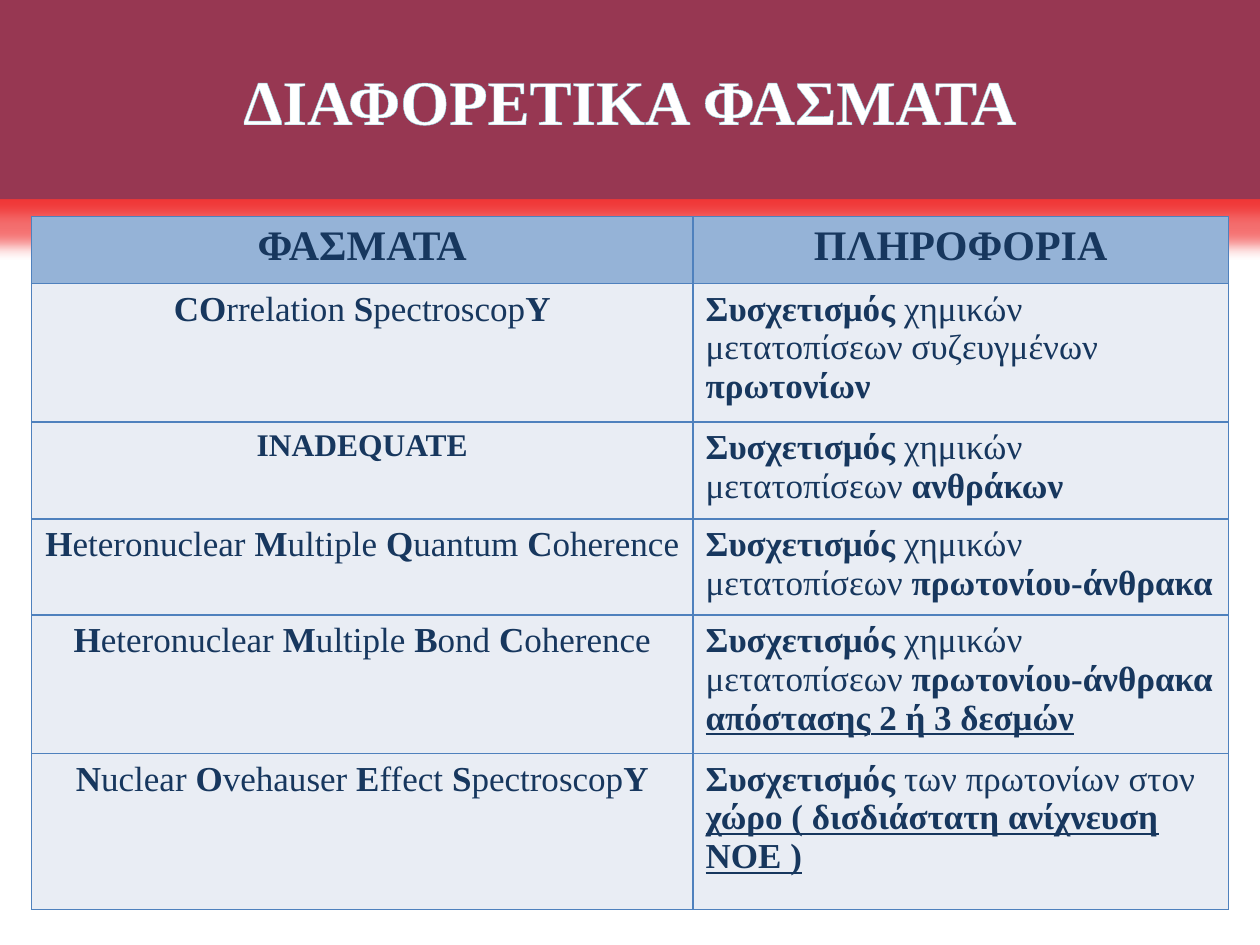
from lxml import etree
from pptx import Presentation
from pptx.dml.color import RGBColor
from pptx.enum import shapes, text
from pptx.oxml import ns
from pptx.util import Inches, Pt

NAVY, BANNER, HEADER, BODY, BORDER = "17375E", "973752", "95B3D7", "E9EDF4", "4F81BD"
CENTER, LEFT = text.PP_ALIGN.CENTER, text.PP_ALIGN.LEFT
COLUMN_WIDTHS = [5.25, 4.25]
ROW_HEIGHTS = [0.53, 1.1, 0.77, 0.76, 1.1, 1.24]

# *...* switches bold, _..._ switches underline
SPECTRA = [
    ("*CO*rrelation *S*pectroscop*Y*",
     "*Συσχετισμός *χημικών μετατοπίσεων συζευγμένων *πρωτονίων*"),
    ("*INADEQUATE*",
     "*Συσχετισμός *χημικών μετατοπίσεων *ανθράκων*"),
    ("*H*eteronuclear *M*ultiple* Q*uantum *C*oherence",
     "*Συσχετισμός *χημικών μετατοπίσεων *πρωτονίου-άνθρακα*"),
    ("*H*eteronuclear *M*ultiple* B*ond* C*oherence",
     "*Συσχετισμός *χημικών μετατοπίσεων *πρωτονίου-άνθρακα _απόστασης* *2 ή 3 δεσμών_*"),
    ("*N*uclear *O*vehauser *E*ffect *S*pectroscop*Y*",
     "*Συσχετισμός *των πρωτονίων στον *_χώρο ( δισδιάστατη ανίχνευση NOE )_*"),
]


def color(value):
    return RGBColor.from_string(value)


def add_xml(parent, tag, **attributes):
    return etree.SubElement(parent, ns.qn(tag), attributes)


def add_solid_fill(parent, value):
    return add_xml(add_xml(parent, "a:solidFill"), "a:srgbClr", val=value)


def add_run(paragraph, words, size, value, **styles):
    run = paragraph.add_run()
    run.text = words
    formats = {"name": "Times New Roman", "size": Pt(size), **styles}
    for name, setting in formats.items():
        setattr(run.font, name, setting)
    run.font.color.rgb = color(value)
    return run


def add_marked_runs(paragraph, marked, size):
    underlined = False
    for i, stretch in enumerate(marked.split("*")):
        for j, words in enumerate(stretch.split("_")):
            if j:
                underlined = not underlined
            if words:
                add_run(paragraph, words, size, NAVY, bold=i % 2 == 1, underline=underlined)


def add_banner(slide, title):
    banner = slide.shapes.add_shape(
        shapes.MSO_SHAPE.RECTANGLE, 0, 0, Inches(10), Inches(1.58))
    banner.shadow.inherit = False
    banner.fill.solid()
    banner.fill.fore_color.rgb = color(BANNER)
    banner.line.fill.background()
    effects = banner._element.spPr.find(ns.qn("a:effectLst"))
    glow = add_xml(effects, "a:glow", rad=str(Inches(0.24)))
    add_xml(add_xml(glow, "a:srgbClr", val="EE1111"), "a:alpha", val="60000")

    banner.text_frame.vertical_anchor = text.MSO_ANCHOR.MIDDLE
    paragraph = banner.text_frame.paragraphs[0]
    paragraph.alignment = CENTER
    run = add_run(paragraph, title, 36, "FFFFFF", bold=True)
    properties = run.font._element
    outline = add_xml(properties, "a:ln", w=str(Pt(1.45)))
    add_solid_fill(outline, "93CDDD")
    properties.insert(0, outline)


def fill_cell(cell, marked, size, alignment, background):
    paragraph = cell.text_frame.paragraphs[0]
    paragraph.alignment = alignment
    add_marked_runs(paragraph, marked, size)
    properties = cell._tc.get_or_add_tcPr()
    for side in ("L", "R", "T", "B"):
        add_solid_fill(add_xml(properties, "a:ln" + side, w=str(Pt(1))), BORDER)
    cell.fill.solid()
    cell.fill.fore_color.rgb = color(background)


def add_spectra_table(slide):
    table = slide.shapes.add_table(
        len(ROW_HEIGHTS), len(COLUMN_WIDTHS), Inches(0.25), Inches(1.72),
        Inches(sum(COLUMN_WIDTHS)), Inches(sum(ROW_HEIGHTS))).table
    for column, width in zip(table.columns, COLUMN_WIDTHS):
        column.width = Inches(width)
    for row, height in zip(table.rows, ROW_HEIGHTS):
        row.height = Inches(height)

    for cell, heading in zip(table.rows[0].cells, ("*ΦΑΣΜΑΤΑ*", "*ΠΛΗΡΟΦΟΡΙΑ*")):
        fill_cell(cell, heading, 24, CENTER, HEADER)
    for i, (spectrum, information) in enumerate(SPECTRA, 1):
        size = 18 if spectrum == "*INADEQUATE*" else 20
        fill_cell(table.cell(i, 0), spectrum, size, CENTER, BODY)
        fill_cell(table.cell(i, 1), information, 20, LEFT, BODY)


def main():
    deck = Presentation()
    deck.slide_width, deck.slide_height = Inches(10), Inches(7.5)
    slide = deck.slides.add_slide(deck.slide_layouts[6])
    add_banner(slide, "ΔΙΑΦΟΡΕΤΙΚΑ ΦΑΣΜΑΤΑ")
    add_spectra_table(slide)
    deck.save("out.pptx")


if __name__ == "__main__":
    main()
